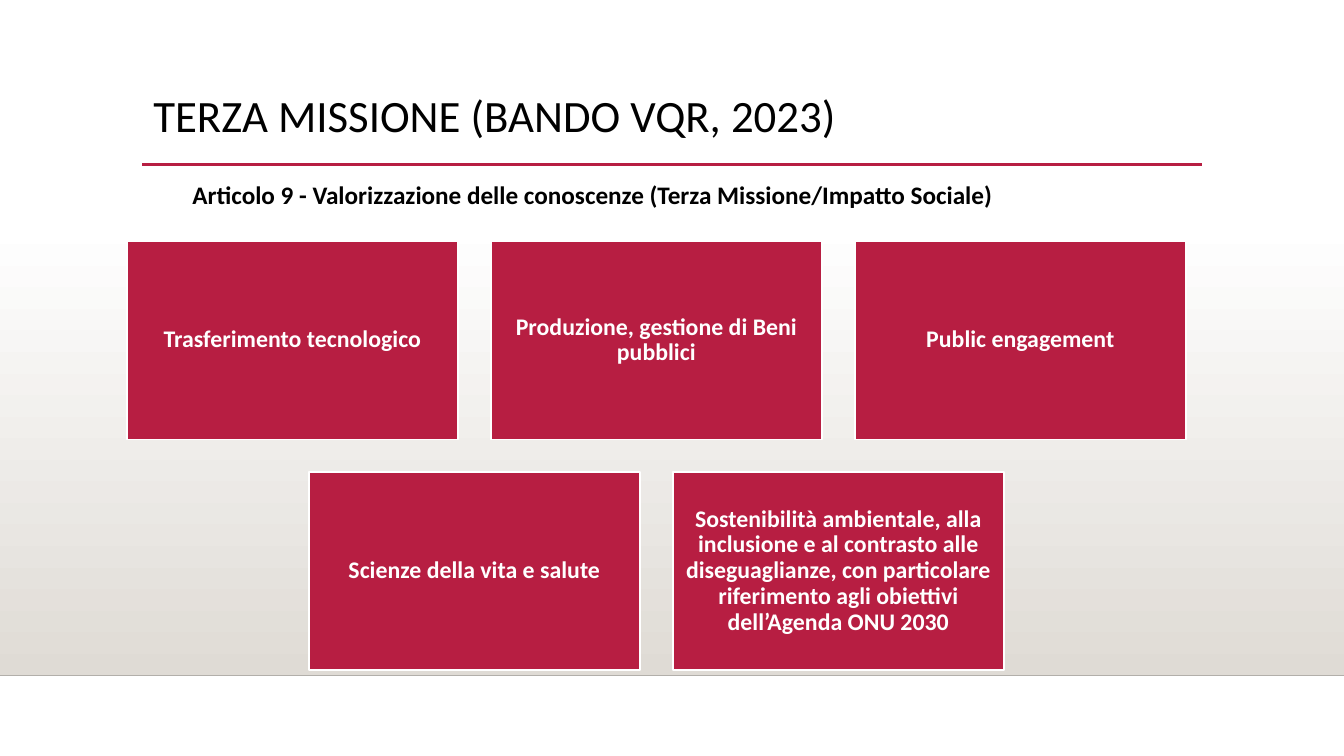
from pptx import Presentation
from pptx.dml.color import RGBColor
from pptx.enum.shapes import MSO_CONNECTOR, MSO_SHAPE
from pptx.enum.text import MSO_ANCHOR, PP_ALIGN
from pptx.oxml.ns import qn
from pptx.util import Inches, Pt
from lxml import etree

WIDTH, HEIGHT = 13.33, 7.5
CRIMSON, WHITE, BLACK, SAND = "B71E42", "FFFFFF", "000000", "DFDBD5"
FLOOR = 6.7
CARD_WIDTH, CARD_HEIGHT = 3.28, 1.97
COLUMN_STEP, ROW_STEP = 3.61, 2.29
CARDS_LEFT, CARDS_TOP = 1.26, 2.39


def write(shape, text, size, color=BLACK, bold=False, align=PP_ALIGN.LEFT,
          anchor=MSO_ANCHOR.TOP, spacing=1.0, inset=None):
    frame = shape.text_frame
    frame.word_wrap = True
    frame.vertical_anchor = anchor
    if inset is not None:
        frame.margin_left = frame.margin_right = Inches(inset)
        frame.margin_top = frame.margin_bottom = Inches(inset)
    para = frame.paragraphs[0]
    para.alignment = align
    para.line_spacing = spacing
    span = para.add_run()
    span.text = text
    span.font.name = "Calibri"
    span.font.size = Pt(size)
    span.font.bold = bold
    span.font.color.rgb = RGBColor.from_string(color)


def add_rule(left, right, y, color, weight):
    rule = page.shapes.add_connector(
        MSO_CONNECTOR.STRAIGHT, Inches(left), Inches(y), Inches(right), Inches(y))
    rule.line.color.rgb = RGBColor.from_string(color)
    rule.line.width = Pt(weight)
    etree.SubElement(rule._element.spPr, qn("a:effectLst"))


deck = Presentation()
deck.slide_width, deck.slide_height = Inches(WIDTH), Inches(HEIGHT)
page = deck.slides.add_slide(deck.slide_layouts[5])
page.background.fill.solid()
page.background.fill.fore_color.rgb = RGBColor.from_string(WHITE)

# Backdrop fading from white to sand
backdrop = page.shapes.add_shape(
    MSO_SHAPE.RECTANGLE, 0, Inches(2.21), Inches(WIDTH), Inches(FLOOR - 2.21))
backdrop.shadow.inherit = False
backdrop.line.fill.background()
backdrop.fill.gradient()
backdrop.fill.gradient_angle = 270
for stop, color in zip(backdrop.fill.gradient_stops, (WHITE, SAND)):
    stop.color.rgb = RGBColor.from_string(color)
add_rule(0, WIDTH, FLOOR, "B2AFAA", 1)

# Heading
add_rule(1.41, 11.92, 1.63, CRIMSON, 2.5)
title = page.shapes.title
title.left, title.top = Inches(1.42), Inches(0.88)
title.width, title.height = Inches(10.5), Inches(1.15)
write(title, "TERZA MISSIONE (BANDO VQR, 2023)", 32, spacing=0.9)
subtitle = page.shapes.add_textbox(Inches(1.81), Inches(1.73), Inches(9.79), Inches(0.4))
write(subtitle,
      "Articolo 9 - Valorizzazione delle conoscenze (Terza Missione/Impatto Sociale)",
      18, bold=True)

# Cards: three above, two centred below
card_rows = [
    ["Trasferimento tecnologico",
     "Produzione, gestione di Beni pubblici",
     "Public engagement"],
    ["Scienze della vita e salute",
     "Sostenibilità ambientale, alla inclusione e al contrasto alle diseguaglianze, "
     "con particolare riferimento agli obiettivi dell’Agenda ONU 2030"],
]
for row, labels in enumerate(card_rows):
    indent = (len(card_rows[0]) - len(labels)) / 2
    for column, label in enumerate(labels):
        card = page.shapes.add_shape(
            MSO_SHAPE.RECTANGLE,
            Inches(CARDS_LEFT + (indent + column) * COLUMN_STEP),
            Inches(CARDS_TOP + row * ROW_STEP),
            Inches(CARD_WIDTH), Inches(CARD_HEIGHT))
        card.shadow.inherit = False
        card.fill.solid()
        card.fill.fore_color.rgb = RGBColor.from_string(CRIMSON)
        card.line.color.rgb = RGBColor.from_string(WHITE)
        card.line.width = Pt(1.25)
        write(card, label, 17, color=WHITE, bold=True, align=PP_ALIGN.CENTER,
              anchor=MSO_ANCHOR.MIDDLE, spacing=0.9, inset=0.07)

deck.save("out.pptx")
